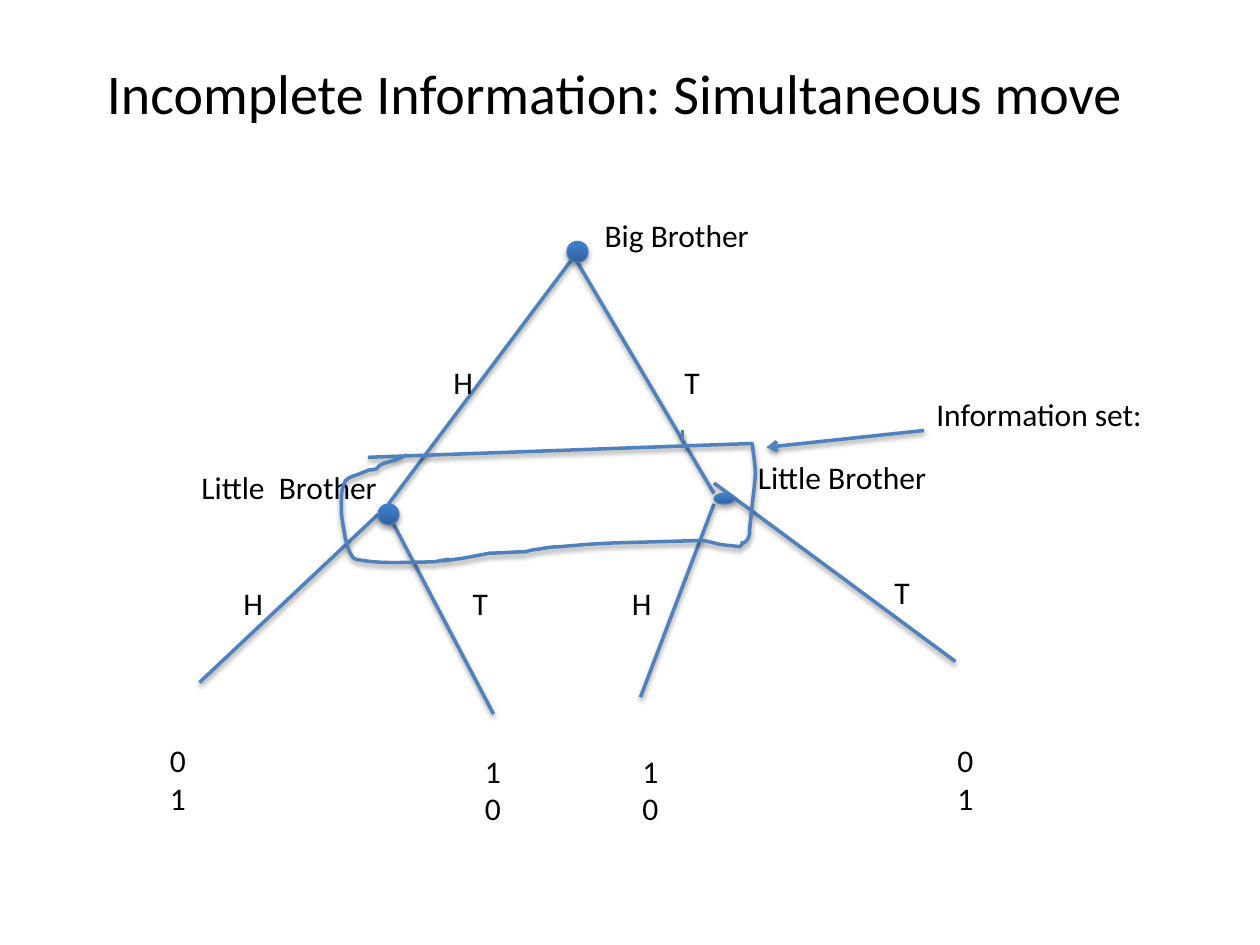
from copy import deepcopy

from lxml import etree
from pptx import Presentation, util as u
from pptx.dml.color import RGBColor
from pptx.enum import shapes, text
from pptx.oxml import ns

# Content: positions in grid units of 1/12 inch (120 columns x 90 rows)
FONT = "Calibri"
COLORS = {"text": "000000", "line": "4F81BD", "rim": "4B7EBC", "dark": "2F5F99",
          "light": "3D7CC7", "bright": "3A7CCB", "shadow": "000000"}
GRADIENT = [("dark", 0), ("light", 0.8), ("bright", 1)]
TITLE = ("Incomplete Information: Simultaneous move", 9, 5, 8.37)

# Wording, column, row, width in inches
PLAYERS = [("Big Brother", 56.4, 20, 1.36), ("Little Brother", 71, 43, 1.56),
           ("Little  Brother", 18, 44, 1.61)]
MOVES = [("H", 42, 34, 0.36), ("T", 64, 34, 0.33), ("H", 22, 55, 0.36),
         ("H", 59, 55, 0.36), ("T", 84, 54, 0.33)]
NARROW_MOVE = ("T", 45, 55, 0.08)
PAYOFFS = [("0\n1", 15, 70, 0.33), ("1\n0", 45, 71, 0.33),
           ("1\n0", 60, 71, 0.33), ("0\n1", 90, 70, 0.33)]
SET_LABEL = ("Information set:", 88, 37, 1.86)

# Start column and row, end column and row
BRANCHES = [(55, 24, 37, 48), (55, 25, 68, 47), (36, 49, 19, 65),
            (37, 49, 47, 68), (65, 41, 65, 42), (68, 46, 91, 63),
            (68, 48, 61, 66.4)]
POINTER = (88, 41, 73, 42.6)
# Column, row, width, height
NODES = [(36, 48, 2, 2), (68, 47, 2, 1), (54, 23, 2, 2)]

# Hand-drawn information set in inches: pairs are lines, sixes are curves
OUTLINE_WIDTH = 3.29
OUTLINE_START = (2.92, 3.63)
OUTLINE = [
    (5.97, 3.52), (6.01, 3.83, 6, 3.69, 5.95, 4.2),
    (5.95, 4.23, 5.95, 4.25, 5.94, 4.27), (5.88, 4.36, 5.89, 4.27, 5.89, 4.32),
    (5.87, 4.34), (5.82, 4.33, 5.76, 4.33, 5.71, 4.32),
    (5.66, 4.31, 5.61, 4.29, 5.56, 4.29), (4.86, 4.31), (4.67, 4.32),
    (4.43, 4.34), (4.37, 4.34, 4.32, 4.35, 4.27, 4.36),
    (4.24, 4.36, 4.2, 4.37, 4.17, 4.38), (4.07, 4.38, 3.98, 4.39, 3.89, 4.39),
    (3.68, 4.43), (3.25, 4.49, 3.78, 4.4, 3.44, 4.46),
    (3.23, 4.46, 3.03, 4.48, 2.83, 4.44), (2.79, 4.44, 2.76, 4.34, 2.76, 4.34),
    (2.75, 4.32, 2.75, 4.29, 2.74, 4.27), (2.73, 4.2, 2.72, 4.16, 2.71, 4.08),
    (2.71, 4, 2.7, 3.91, 2.73, 3.84), (2.74, 3.8, 2.79, 3.78, 2.83, 3.77),
    (2.93, 3.73), (2.95, 3.73, 2.97, 3.73, 2.99, 3.72),
    (3, 3.7, 3.02, 3.69, 3.04, 3.68), (3.07, 3.67, 3.11, 3.66, 3.14, 3.65),
    (3.16, 3.64, 3.18, 3.64, 3.19, 3.63), (3.23, 3.61)]

deck = Presentation()
deck.slide_width, deck.slide_height = u.Inches(10), u.Inches(7.5)
page = deck.slides.add_slide(deck.slide_layouts[6])


def grid(*cells):
    return [u.Inches(cell / 12) for cell in cells]


def color(name):
    return RGBColor.from_string(COLORS[name])


def add_shadow(shape, opacity, distance):
    properties = shape.element.spPr
    for old in properties.findall(ns.qn("a:effectLst")):
        properties.remove(old)
    effects = etree.SubElement(properties, ns.qn("a:effectLst"))
    outer = etree.SubElement(effects, ns.qn("a:outerShdw"), blurRad=str(u.Pt(3.1)),
                             dist=str(u.Pt(distance)), dir="5400000", rotWithShape="0")
    tone = etree.SubElement(outer, ns.qn("a:srgbClr"), val=COLORS["shadow"])
    etree.SubElement(tone, ns.qn("a:alpha"), val=str(opacity * 1000))


def style_stroke(shape):
    shape.line.color.rgb = color("line")
    shape.line.width = u.Pt(2)
    add_shadow(shape, 38, 1.6)


def add_line(ends):
    line = page.shapes.add_connector(shapes.MSO_CONNECTOR.STRAIGHT, *grid(*ends))
    style_stroke(line)
    return line


def add_text(words, column, row, width, size=18, wrap=False):
    lines = words.split("\n")
    height = 0.1 + len(lines) * size * 1.2 / 72
    box = page.shapes.add_textbox(*grid(column, row), u.Inches(width), u.Inches(height))
    frame = box.text_frame
    frame.word_wrap = wrap
    frame.auto_size = text.MSO_AUTO_SIZE.SHAPE_TO_FIT_TEXT
    frame.text = words
    for para in frame.paragraphs:
        para.font.name, para.font.size = FONT, u.Pt(size)
        para.font.color.rgb = color("text")


def add_node(cells):
    dot = page.shapes.add_shape(shapes.MSO_SHAPE.OVAL, *grid(*cells))
    dot.fill.gradient()
    dot.fill.gradient_angle = 90
    stops = dot.element.spPr.find(".//" + ns.qn("a:gsLst"))
    stops.append(deepcopy(stops[-1]))
    for stop, (name, position) in zip(dot.fill.gradient_stops, GRADIENT):
        stop.color.rgb, stop.position = color(name), position
    dot.line.color.rgb, dot.line.width = color("rim"), u.Pt(0.75)
    add_shadow(dot, 35, 1.8)


def add_outline(start, segments):
    """Draw straight segments, then bend those that have control points."""
    builder = page.shapes.build_freeform(*map(u.Inches, start))
    builder.add_line_segments([tuple(map(u.Inches, part[-2:])) for part in segments],
                              close=False)
    shape = builder.convert_to_shape()
    steps = list(shape.element.iter(ns.qn("a:lnTo")))
    for step, part in zip(steps, segments):
        if len(part) == 2:
            continue
        curve = etree.Element(ns.qn("a:cubicBezTo"))
        for x, y in zip(part[::2], part[1::2]):
            etree.SubElement(curve, ns.qn("a:pt"), x=str(u.Inches(x) - shape.left),
                             y=str(u.Inches(y) - shape.top))
        step.getparent().replace(step, curve)
    # Widen the frame to hold the bulge of the right-hand curve
    shape.width = u.Inches(OUTLINE_WIDTH)
    next(shape.element.iter(ns.qn("a:path"))).set("w", str(shape.width))
    shape.fill.background()
    style_stroke(shape)


# Tree branches, players and moves
for branch in BRANCHES:
    add_line(branch)
for label in PLAYERS + MOVES:
    add_text(*label)
add_text(*NARROW_MOVE, wrap=True)

# Decision nodes, payoffs and title
for node in NODES:
    add_node(node)
for payoff in PAYOFFS:
    add_text(*payoff)
add_text(*TITLE, size=32)

# Information set, its label and pointer
add_outline(OUTLINE_START, OUTLINE)
add_text(*SET_LABEL)
pointer = add_line(POINTER)
etree.SubElement(pointer.element.spPr.find(ns.qn("a:ln")), ns.qn("a:tailEnd"), type="arrow")

deck.save("out.pptx")
